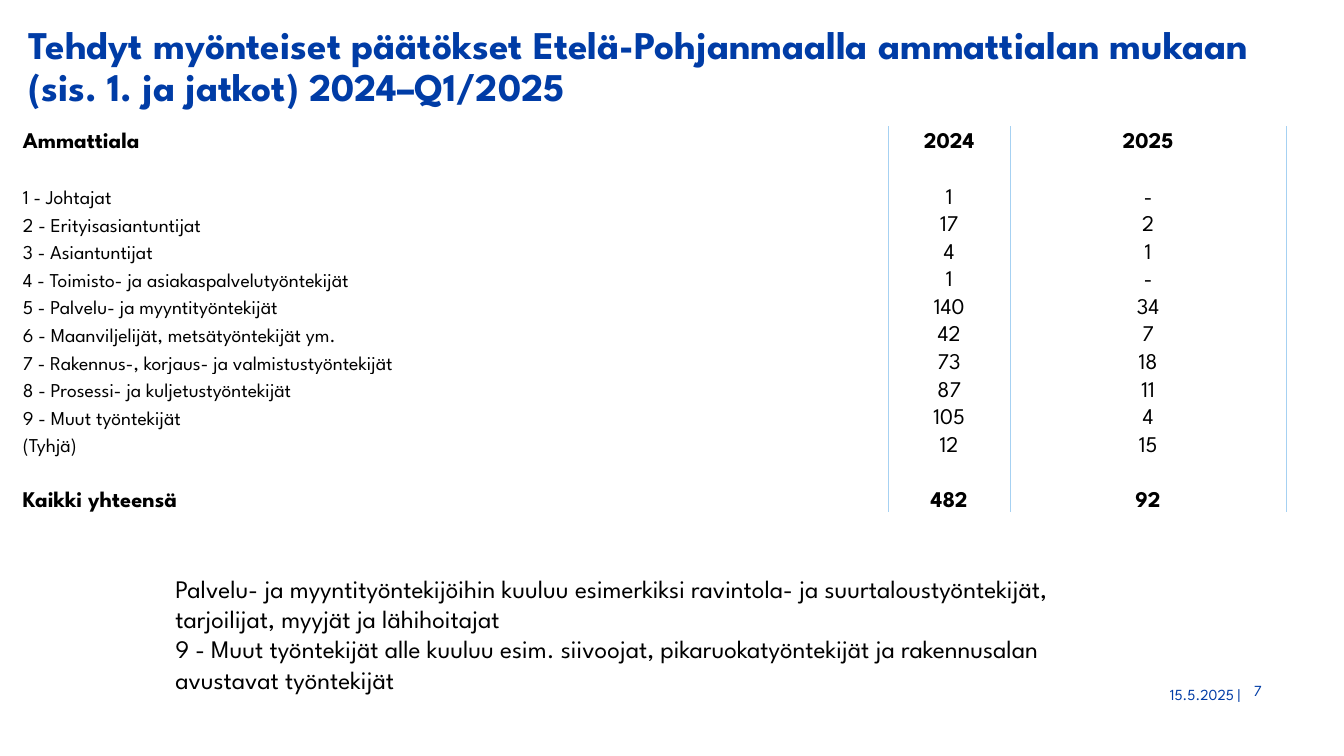
from lxml import etree
from pptx import Presentation
from pptx.dml.color import RGBColor
from pptx.enum.text import MSO_ANCHOR, PP_ALIGN
from pptx.oxml.ns import qn
from pptx.util import Inches, Pt

LEFT, CENTER, RIGHT = PP_ALIGN.LEFT, PP_ALIGN.CENTER, PP_ALIGN.RIGHT
TOP, MIDDLE, BOTTOM = MSO_ANCHOR.TOP, MSO_ANCHOR.MIDDLE, MSO_ANCHOR.BOTTOM

COLORS = {"blue": "003CA6", "black": "000000", "white": "FFFFFF", "rule": "A6D1F2"}
FONT = "League Spartan"
PLAIN_TABLE_STYLE = "{2D5ABB26-0587-4C30-8999-92F81FD0307C}"

COLUMN_WIDTHS = [12.89, 1.81, 4.11]
ROW_HEIGHT = 0.41
OCCUPATIONS = [
    ("1 - Johtajat", "1", "-"),
    ("2 - Erityisasiantuntijat", "17", "2"),
    ("3 - Asiantuntijat", "4", "1"),
    ("4 - Toimisto- ja asiakaspalvelutyöntekijät", "1", "-"),
    ("5 - Palvelu- ja myyntityöntekijät", "140", "34"),
    ("6 - Maanviljelijät, metsätyöntekijät ym.", "42", "7"),
    ("7 - Rakennus-, korjaus- ja valmistustyöntekijät", "73", "18"),
    ("8 - Prosessi- ja kuljetustyöntekijät", "87", "11"),
    ("9 - Muut työntekijät", "105", "4"),
    ("(Tyhjä)", "12", "15"),
]
SPACER = ("", "", "")
ROWS = [
    ("Ammattiala", "2024", "2025"),
    SPACER,
    *OCCUPATIONS,
    SPACER,
    ("Kaikki yhteensä", "482", "92"),
]
TITLE = (
    "Tehdyt myönteiset päätökset Etelä-Pohjanmaalla ammattialan mukaan "
    "(sis. 1. ja jatkot) 2024–Q1/2025"
)
NOTES = [
    "Palvelu- ja myyntityöntekijöihin kuuluu esimerkiksi ravintola- ja "
    "suurtaloustyöntekijät, tarjoilijat, myyjät ja lähihoitajat",
    "9 - Muut työntekijät alle kuuluu esim. siivoojat, pikaruokatyöntekijät "
    "ja rakennusalan avustavat työntekijät",
]


class SlideBuilder:
    def __init__(self, slide, font):
        self.slide = slide
        self.font = font

    def add_run(self, paragraph, text, size, color="black", bold=False, align=LEFT):
        paragraph.alignment = align
        run = paragraph.add_run()
        run.text = text
        for name, value in {"name": self.font, "size": Pt(size), "bold": bold}.items():
            setattr(run.font, name, value)
        run.font.color.rgb = RGBColor.from_string(COLORS[color])

    def text(self, box, lines, size, anchor=TOP, spacing=None, **style):
        shape = self.slide.shapes.add_textbox(*map(Inches, box))
        frame = shape.text_frame
        frame.word_wrap = True
        frame.vertical_anchor = anchor
        for index, line in enumerate(lines):
            paragraph = frame.add_paragraph() if index else frame.paragraphs[0]
            paragraph.line_spacing = spacing
            self.add_run(paragraph, line, size, **style)

    def rule(self, cell, sides):
        """Draw a thin line on the given cell sides, listed in schema order."""
        properties = cell._tc.get_or_add_tcPr()
        for index, side in enumerate(sides):
            line = etree.Element(qn(f"a:ln{side}"), w=str(Pt(1)))
            fill = etree.SubElement(line, qn("a:solidFill"))
            etree.SubElement(fill, qn("a:srgbClr"), val=COLORS["rule"])
            properties.insert(index, line)

    def table(self, left, top, rows, widths, row_height):
        frame = self.slide.shapes.add_table(
            len(rows), len(widths), Inches(left), Inches(top),
            Inches(sum(widths)), Inches(row_height * len(rows)),
        )
        table = frame.table
        table.first_row = table.horz_banding = False
        table._tbl.tblPr.find(qn("a:tableStyleId")).text = PLAIN_TABLE_STYLE
        for column, width in zip(table.columns, widths):
            column.width = Inches(width)
        cell_format = {
            "margin_left": Inches(0.01),
            "margin_right": Inches(0.01),
            "margin_top": Inches(0.01),
            "margin_bottom": 0,
            "vertical_anchor": BOTTOM,
        }
        for row_index, row in enumerate(rows):
            table.rows[row_index].height = Inches(row_height)
            bold = row_index in (0, len(rows) - 1)
            for column_index, text in enumerate(row):
                cell = table.cell(row_index, column_index)
                for name, value in cell_format.items():
                    setattr(cell, name, value)
                cell.fill.solid()
                cell.fill.fore_color.rgb = RGBColor.from_string(COLORS["white"])
                self.rule(cell, "LR" if column_index else "R")
                if text:
                    size = 24 if bold or column_index else 21
                    align = CENTER if column_index else LEFT
                    self.add_run(cell.text_frame.paragraphs[0], text, size,
                                 bold=bold, align=align)


def main():
    presentation = Presentation()
    presentation.slide_width = Inches(20)
    presentation.slide_height = Inches(11.25)
    slide = presentation.slides.add_slide(presentation.slide_layouts[6])
    builder = SlideBuilder(slide, FONT)

    builder.text((18.56, 10.08, 0.81, 0.38), ["7"], 16.5, color="blue")
    builder.text((0.33, 0.34, 18.66, 1.34), [TITLE], 42, anchor=MIDDLE,
                 spacing=0.9, color="blue", bold=True)
    builder.table(0.33, 1.88, ROWS, COLUMN_WIDTHS, ROW_HEIGHT)
    builder.text((9.54, 10.08, 9.02, 0.5), ["15.5.2025 |"], 16.5, anchor=MIDDLE,
                 color="blue", align=RIGHT)
    builder.text((2.51, 8.48, 13.32, 1.92), NOTES, 27)

    presentation.save("out.pptx")


if __name__ == "__main__":
    main()
